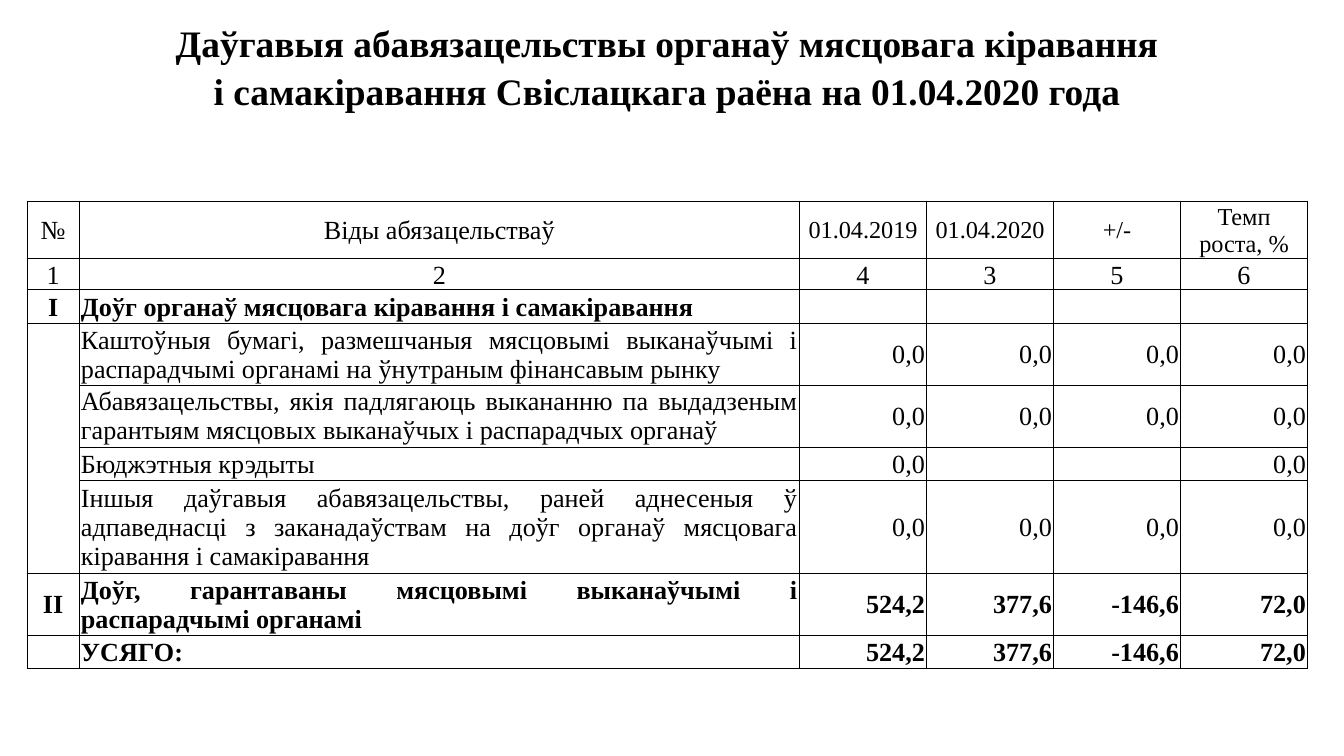
from lxml.etree import SubElement
from pptx import Presentation
from pptx.dml.color import RGBColor
from pptx.enum.text import MSO_ANCHOR, PP_ALIGN
from pptx.oxml.ns import qn
from pptx.util import Cm, Pt

# Content
TITLE = ["Даўгавыя абавязацельствы органаў мясцовага кіравання",
         "і самакіравання Свіслацкага раёна на 01.04.2020 года"]
HEADER = ["№", "Віды абязацельстваў", "01.04.2019", "01.04.2020", "+/-",
          "Темп\nроста, %"]
NUMBERS = ["1", "2", "4", "3", "5", "6"]
ZEROS = ["0,0"] * 4
TOTALS = ["524,2", "377,6", "-146,6", "72,0"]
BODY = [
    ["I", "Доўг органаў мясцовага кіравання і самакіравання", "", "", "", ""],
    ["", "Каштоўныя бумагі, размешчаныя мясцовымі выканаўчымі і "
         "распарадчымі органамі на ўнутраным фінансавым рынку", *ZEROS],
    ["", "Абавязацельствы, якія падлягаюць выкананню па выдадзеным "
         "гарантыям мясцовых выканаўчых і распарадчых органаў", *ZEROS],
    ["", "Бюджэтныя крэдыты", "0,0", "", "", "0,0"],
    ["", "Іншыя даўгавыя абавязацельствы, раней аднесеныя ў адпаведнасці "
         "з заканадаўствам на доўг органаў мясцовага кіравання і "
         "самакіравання", *ZEROS],
    ["II", "Доўг, гарантаваны мясцовымі выканаўчымі і распарадчымі органамі",
     *TOTALS],
    ["", "УСЯГО:", *TOTALS],
]
ROWS = [[""], ["\n".join(TITLE)], [""], [""], HEADER, NUMBERS, *BODY]

# Layout, in cm
LEFT, TOP = 0.51, -0.66
COLS = [0.99, 13.61] + [2.4] * 4
HEIGHTS = [0.97, 1.83, 0.97, 0.69, 1.09, 0.59,
           0.59, 1.17, 1.17, 0.59, 1.75, 1.17, 0.59]
TITLE_ROW, HEADER_ROW, NUMBER_ROW, BODY_ROW = 1, 4, 5, 6
GROUP = range(7, 11)          # rows that share one open cell in column 0
TOP_ROW = 8                   # the row whose description sits at the top
BOLD_ROWS = {TITLE_ROW, 6, 11, 12}
FONT, BLACK, WHITE = "Times New Roman", "000000", "FFFFFF"


def rgb(value):
    return RGBColor.from_string(value)


def set_borders(cell, sides):
    tc_pr = cell._tc.get_or_add_tcPr()
    for side in "LRTB":
        ln = SubElement(tc_pr, qn(f"a:ln{side}"), w=str(Pt(0.5)))
        if side in sides:
            fill = SubElement(ln, qn("a:solidFill"))
            SubElement(fill, qn("a:srgbClr"), val=BLACK)
        else:
            SubElement(ln, qn("a:noFill"))


def border_sides(row, col):
    if row < HEADER_ROW:
        return "B" if row == HEADER_ROW - 1 else ""
    if col == 0 and row in GROUP:
        return ("LR" + ("T" if row == GROUP[0] else "")
                + ("B" if row == GROUP[-1] else ""))
    return "LRTB"


def text_size(row, col):
    if row == TITLE_ROW:
        return 20
    return 13 if row == HEADER_ROW and col > 1 else 14


def text_align(row, col):
    if row < BODY_ROW or col == 0:
        return PP_ALIGN.CENTER
    if col > 1:
        return PP_ALIGN.RIGHT
    return PP_ALIGN.LEFT if row == len(ROWS) - 1 else PP_ALIGN.JUSTIFY


def text_anchor(row, col):
    if row in (TITLE_ROW, NUMBER_ROW):
        return MSO_ANCHOR.BOTTOM
    return MSO_ANCHOR.TOP if (row, col) == (TOP_ROW, 1) else MSO_ANCHOR.MIDDLE


def fill_cell(cell, row, col, text):
    set_borders(cell, border_sides(row, col))
    if row == 2 or (row >= BODY_ROW and col > 1):
        cell.fill.solid()
        cell.fill.fore_color.rgb = rgb(WHITE)
    else:
        cell.fill.background()
    cell.margin_left = cell.margin_right = cell.margin_top = Cm(0.03)
    cell.margin_bottom = 0
    cell.vertical_anchor = text_anchor(row, col)
    cell.text_frame.text = text
    size = text_size(row, col)
    for p in cell.text_frame.paragraphs:
        p.alignment = text_align(row, col)
        if row == TITLE_ROW:
            p.line_spacing = 1.15
        for r in p.runs:
            r.font.name, r.font.size = FONT, Pt(size)
            r.font.bold = row in BOLD_ROWS
            r.font.color.rgb = rgb(BLACK)
        if not p.runs:  # keeps empty cells from stretching their row
            SubElement(p._p, qn("a:endParaRPr"), sz=str(size * 100))


prs = Presentation()
prs.slide_width, prs.slide_height = Cm(25.4), Cm(14.29)
s = prs.slides.add_slide(prs.slide_layouts[6])

# Table with the title in its merged upper rows
table = s.shapes.add_table(len(ROWS), len(COLS), Cm(LEFT), Cm(TOP),
                           Cm(sum(COLS)), Cm(sum(HEIGHTS))).table
table.first_row = table.horz_banding = False
for column, width in zip(table.columns, COLS):
    column.width = Cm(width)
for row, (texts, height) in enumerate(zip(ROWS, HEIGHTS)):
    table.rows[row].height = Cm(height)
    if row < HEADER_ROW:
        table.cell(row, 0).merge(table.cell(row, len(COLS) - 1))
    for col in range(len(COLS)):
        text = texts[col] if col < len(texts) else ""
        fill_cell(table.cell(row, col), row, col, text)

prs.save("out.pptx")
